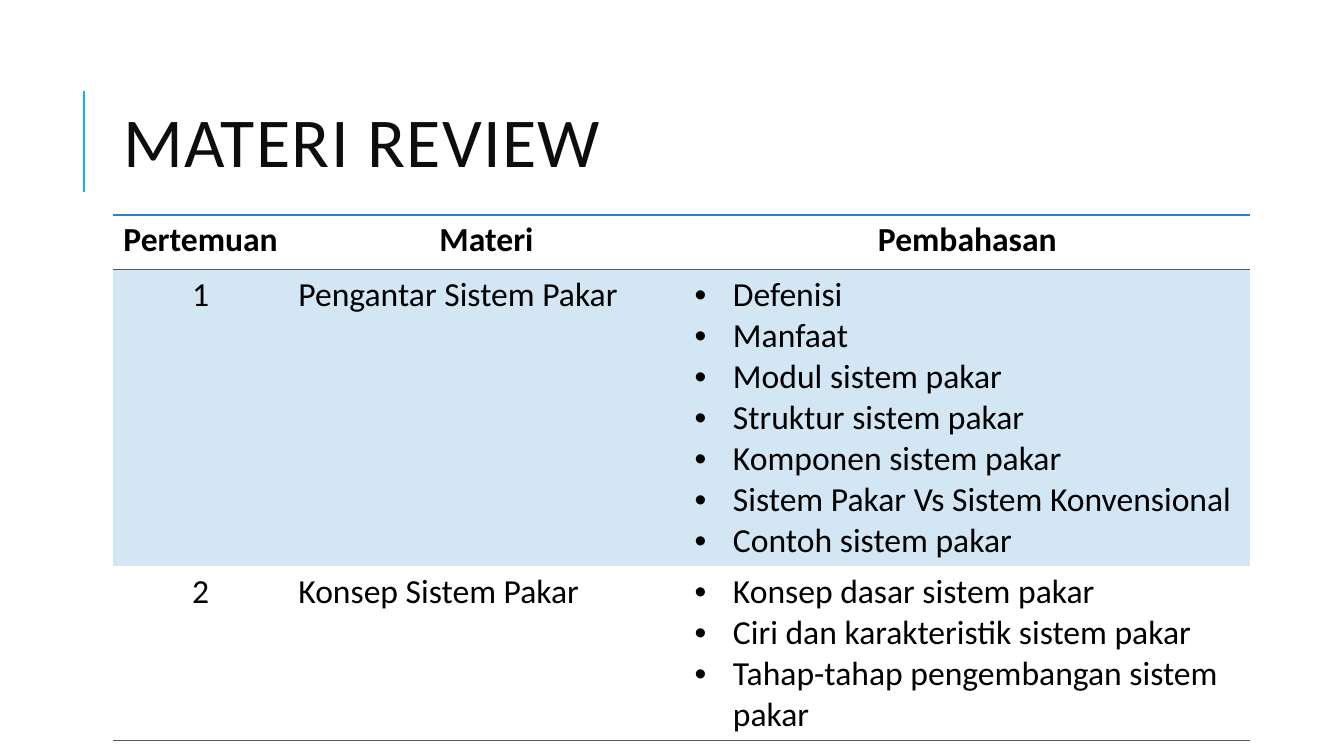
from lxml import etree
from pptx import Presentation
from pptx.dml.color import RGBColor
from pptx.enum.shapes import MSO_CONNECTOR
from pptx.enum.text import MSO_ANCHOR, PP_ALIGN
from pptx.oxml.ns import qn
from pptx.util import Inches, Pt

LEFT, CENTER = PP_ALIGN.LEFT, PP_ALIGN.CENTER
MIDDLE = MSO_ANCHOR.MIDDLE
STRAIGHT = MSO_CONNECTOR.STRAIGHT

TITLE = "MATERI REVIEW"
HEADS = ["Pertemuan", "Materi", "Pembahasan"]
TOPICS = [
    ("1", "Pengantar Sistem Pakar", [
        "Defenisi",
        "Manfaat",
        "Modul sistem pakar",
        "Struktur sistem pakar",
        "Komponen sistem pakar",
        "Sistem Pakar Vs Sistem Konvensional",
        "Contoh sistem pakar",
    ]),
    ("2", "Konsep Sistem Pakar", [
        "Konsep dasar sistem pakar",
        "Ciri dan karakteristik sistem pakar",
        "Tahap-tahap pengembangan sistem pakar",
    ]),
]
WIDTHS = [1.74, 3.93, 5.61]
HEIGHTS = [0.54, 2.95, 1.34]
BLUE, BAND, GRAY = "2683C6", "D3E6F3", "595959"
TOP, THIN, BARE = (1.5, BLUE), (0.75, GRAY), (0, None)
EDGES = [(TOP, THIN), (THIN, BARE), (BARE, THIN)]


def color(code):
    return RGBColor.from_string(code)


def write(par, text, size=24, bold=False, ink="000000", align=LEFT, bullet=False):
    par.alignment = align
    run = par.add_run()
    run.text = text
    font = run.font
    font.name, font.size, font.bold = "Calibri", Pt(size), bold
    font.color.rgb = color(ink)
    if bullet:
        props = par._p.get_or_add_pPr()
        props.set("marL", str(Inches(0.38)))
        props.set("indent", str(-Inches(0.38)))
        face = etree.SubElement(props, qn("a:buFont"))
        face.set("typeface", "Arial")
        etree.SubElement(props, qn("a:buChar")).set("char", "•")
    return run


def border(cell, edges):
    props = cell._tc.get_or_add_tcPr()
    for spot, (side, (width, ink)) in enumerate(zip(("lnT", "lnB"), edges)):
        edge = etree.Element(qn("a:" + side), w=str(Pt(width)))
        if ink:
            fill = etree.SubElement(edge, qn("a:solidFill"))
            etree.SubElement(fill, qn("a:srgbClr")).set("val", ink)
        else:
            etree.SubElement(edge, qn("a:noFill"))
        props.insert(spot, edge)


def add_title(slide):
    title = slide.shapes.title
    title.left, title.top = Inches(1.12), Inches(0.64)
    title.width, title.height = Inches(10.63), Inches(1.64)
    frame = title.text_frame
    frame.vertical_anchor = MIDDLE
    frame.word_wrap = True
    par = frame.paragraphs[0]
    par.line_spacing = 0.8
    run = write(par, TITLE, size=50, ink="0D0D0D")
    run._r.get_or_add_rPr().set("spc", "100")
    x = Inches(0.83)
    rule = slide.shapes.add_connector(STRAIGHT, x, Inches(1.9), x, Inches(0.9))
    rule.line.color.rgb = color("1CADE4")
    rule.line.width = Pt(1.5)
    etree.SubElement(rule._element.spPr, qn("a:effectLst"))


def add_topics(slide):
    rows = [HEADS] + TOPICS
    frame = slide.shapes.add_table(
        len(rows), len(HEADS), Inches(1.12), Inches(2.13),
        Inches(sum(WIDTHS)), Inches(sum(HEIGHTS)))
    table = frame.table
    style = table._tbl.tblPr.find(qn("a:tableStyleId"))
    style.text = "{2D5ABB26-0587-4C30-8999-92F81FD0307C}"
    for col, width in zip(table.columns, WIDTHS):
        col.width = Inches(width)
    for r, (row, height) in enumerate(zip(rows, HEIGHTS)):
        table.rows[r].height = Inches(height)
        for c, item in enumerate(row):
            cell = table.cell(r, c)
            if r == 1:
                cell.fill.solid()
                cell.fill.fore_color.rgb = color(BAND)
            else:
                cell.fill.background()
            listed = isinstance(item, list)
            body = cell.text_frame
            for n, text in enumerate(item if listed else [item]):
                par = body.add_paragraph() if n else body.paragraphs[0]
                write(par, text, bold=r == 0, bullet=listed,
                      align=CENTER if r == 0 or c == 0 else LEFT)
            border(cell, EDGES[r])


def main():
    deck = Presentation()
    deck.slide_width, deck.slide_height = Inches(13.33), Inches(7.5)
    slide = deck.slides.add_slide(deck.slide_layouts[5])
    add_title(slide)
    add_topics(slide)
    deck.save("out.pptx")


if __name__ == "__main__":
    main()
